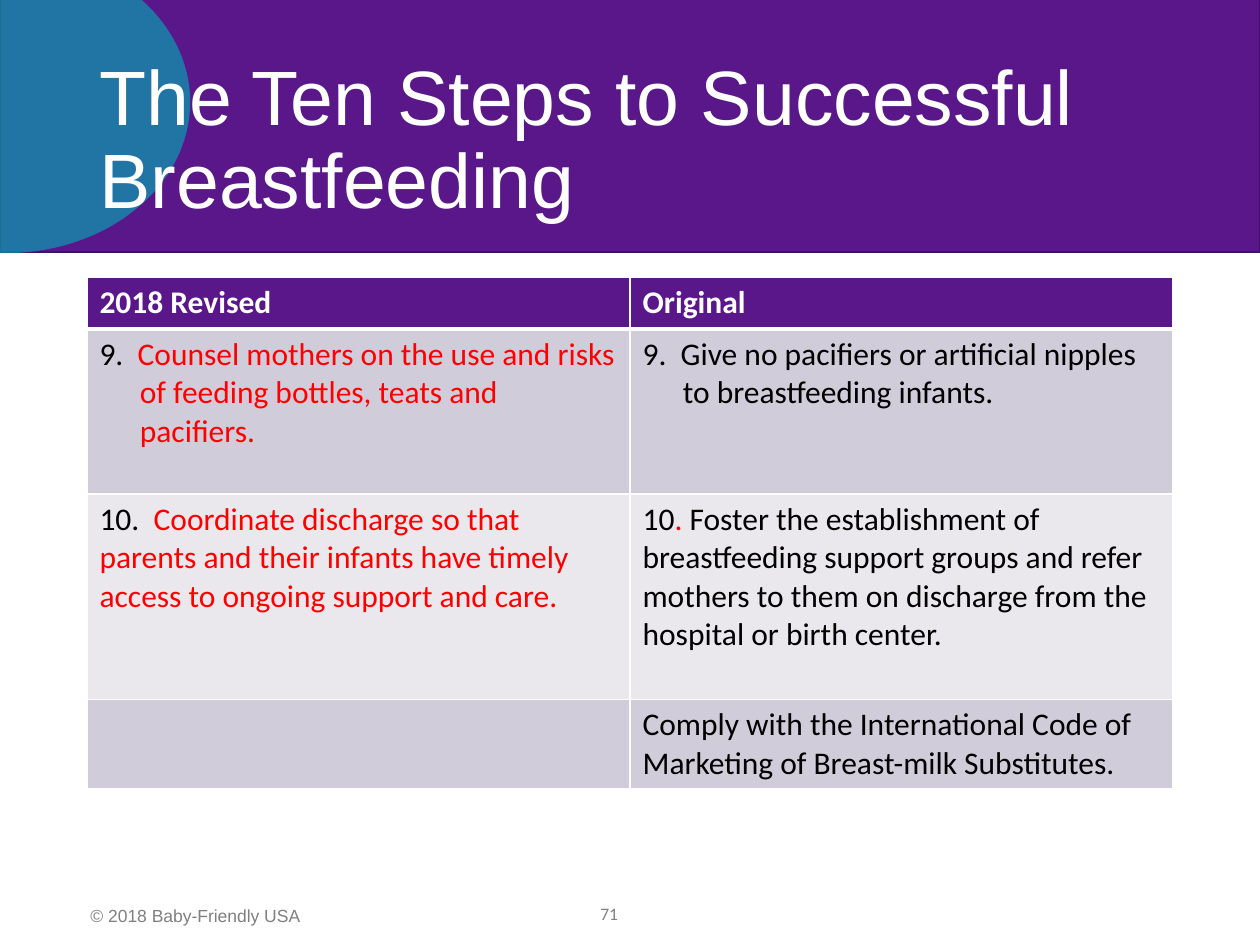
from lxml import etree
from pptx import Presentation
from pptx.dml.color import RGBColor
from pptx.enum.shapes import MSO_SHAPE
from pptx.enum.text import MSO_ANCHOR, PP_ALIGN
from pptx.oxml.ns import qn
from pptx.util import Inches, Pt

RECTANGLE, OVAL = MSO_SHAPE.RECTANGLE, MSO_SHAPE.OVAL
TOP, MIDDLE = MSO_ANCHOR.TOP, MSO_ANCHOR.MIDDLE
LEFT, CENTER = PP_ALIGN.LEFT, PP_ALIGN.CENTER
COLORS = {
    "purple": "59178A", "edge": "421166", "teal": "00ADB5", "gray": "808080",
    "white": "FFFFFF", "black": "000000", "red": "FF0000",
    "band_dark": "D1CCDA", "band_light": "EAE8ED",
}


def rgb(name):
    return RGBColor.from_string(COLORS[name])


def write_text(frame, runs, *, size, font="Calibri", bold=False, align=LEFT,
               anchor=TOP, spacing=1.0, hanging=0):
    frame.word_wrap = True
    frame.vertical_anchor = anchor
    paragraph = frame.paragraphs[0]
    paragraph.alignment = align
    paragraph.line_spacing = spacing
    if hanging:
        properties = paragraph._p.get_or_add_pPr()
        properties.set("marL", str(Inches(hanging)))
        properties.set("indent", str(-Inches(hanging)))
    for text, color in runs:
        run = paragraph.add_run()
        run.text = text
        run.font.size = Pt(size)
        run.font.name = font
        run.font.bold = bold
        run.font.color.rgb = rgb(color)


class SlideBuilder:
    """Draws styled elements on a slide grid of 100 columns by 75 rows."""

    def __init__(self, presentation):
        self.slide = presentation.slides.add_slide(presentation.slide_layouts[6])
        self.column = presentation.slide_width / 100
        self.row = presentation.slide_height / 75

    def place(self, left, top, width, height):
        return (round(left * self.column), round(top * self.row),
                round(width * self.column), round(height * self.row))

    def shape(self, kind, box, fill, line=None, opacity=100):
        shape = self.slide.shapes.add_shape(kind, *self.place(*box))
        shape.shadow.inherit = False
        shape.fill.solid()
        shape.fill.fore_color.rgb = rgb(fill)
        if line:
            shape.line.color.rgb = rgb(line)
            shape.line.width = Pt(1)
        else:
            shape.line.fill.background()
        if opacity < 100:
            color = shape.element.spPr.find(qn("a:solidFill"))[0]
            etree.SubElement(color, qn("a:alpha"), val=str(opacity * 1000))

    def text(self, box, text, color, **style):
        shape = self.slide.shapes.add_textbox(*self.place(*box))
        write_text(shape.text_frame, [(text, color)], **style)

    def border(self, cell, side, width):
        line = etree.SubElement(cell._tc.get_or_add_tcPr(), qn(f"a:ln{side}"), w=str(Pt(width)))
        fill = etree.SubElement(line, qn("a:solidFill"))
        etree.SubElement(fill, qn("a:srgbClr"), val=COLORS["white"])

    def table(self, box, row_heights, rows, fills, hanging_row):
        table = self.slide.shapes.add_table(len(rows), len(rows[0]), *self.place(*box)).table
        for index, (height, fill, contents) in enumerate(zip(row_heights, fills, rows)):
            table.rows[index].height = round(height * self.row)
            for column, runs in enumerate(contents):
                cell = table.cell(index, column)
                widths = {"L": 1, "R": 1, "T": 3 if index == 1 else 1,
                          "B": 3 if index == 0 else 1}
                for side, width in widths.items():
                    self.border(cell, side, width)
                cell.fill.solid()
                cell.fill.fore_color.rgb = rgb(fill)
                write_text(cell.text_frame, runs, size=18, bold=index == 0,
                           hanging=0.32 if index == hanging_row else 0)


def main():
    presentation = Presentation()
    presentation.slide_width, presentation.slide_height = Inches(10), Inches(7.5)
    builder = SlideBuilder(presentation)
    builder.shape(RECTANGLE, (0, -0.4, 100, 20.4), "purple", line="edge")
    builder.shape(OVAL, (-14.2, -3.9, 29.3, 24), "teal", opacity=63)
    builder.text((6.2, 71.3, 21, 2.7), "© 2018 Baby-Friendly USA", "gray",
                 size=10, font="Arial")
    builder.text((37.1, 70.5, 22.5, 4), "71", "gray", size=10, align=CENTER, anchor=MIDDLE)
    builder.text((6.9, 4, 86.2, 14.5), "The Ten Steps to Successful Breastfeeding",
                 "white", size=44, font="Arial", anchor=MIDDLE, spacing=0.9)
    rows = [
        [[("2018 Revised", "white")], [("Original", "white")]],
        [[("9.  ", "black"),
          ("Counsel mothers on the use and risks of feeding bottles, teats and pacifiers.", "red")],
         [("9.  Give no pacifiers or artificial nipples to breastfeeding infants.", "black")]],
        [[("10.  ", "black"),
          ("Coordinate discharge so that parents and their infants have timely access to "
           "ongoing support and care.", "red")],
         [("10", "black"), (". ", "red"),
          ("Foster the establishment of breastfeeding support groups and refer mothers to "
           "them on discharge from the hospital or birth center.", "black")]],
        [[], [("Comply with the International Code of Marketing of Breast-milk Substitutes.",
               "black")]],
    ]
    builder.table((6.9, 22, 86.2, 40.6), [4.1, 13.1, 16.3, 7.1], rows,
                  ["purple", "band_dark", "band_light", "band_dark"], hanging_row=1)
    presentation.save("out.pptx")


if __name__ == "__main__":
    main()
